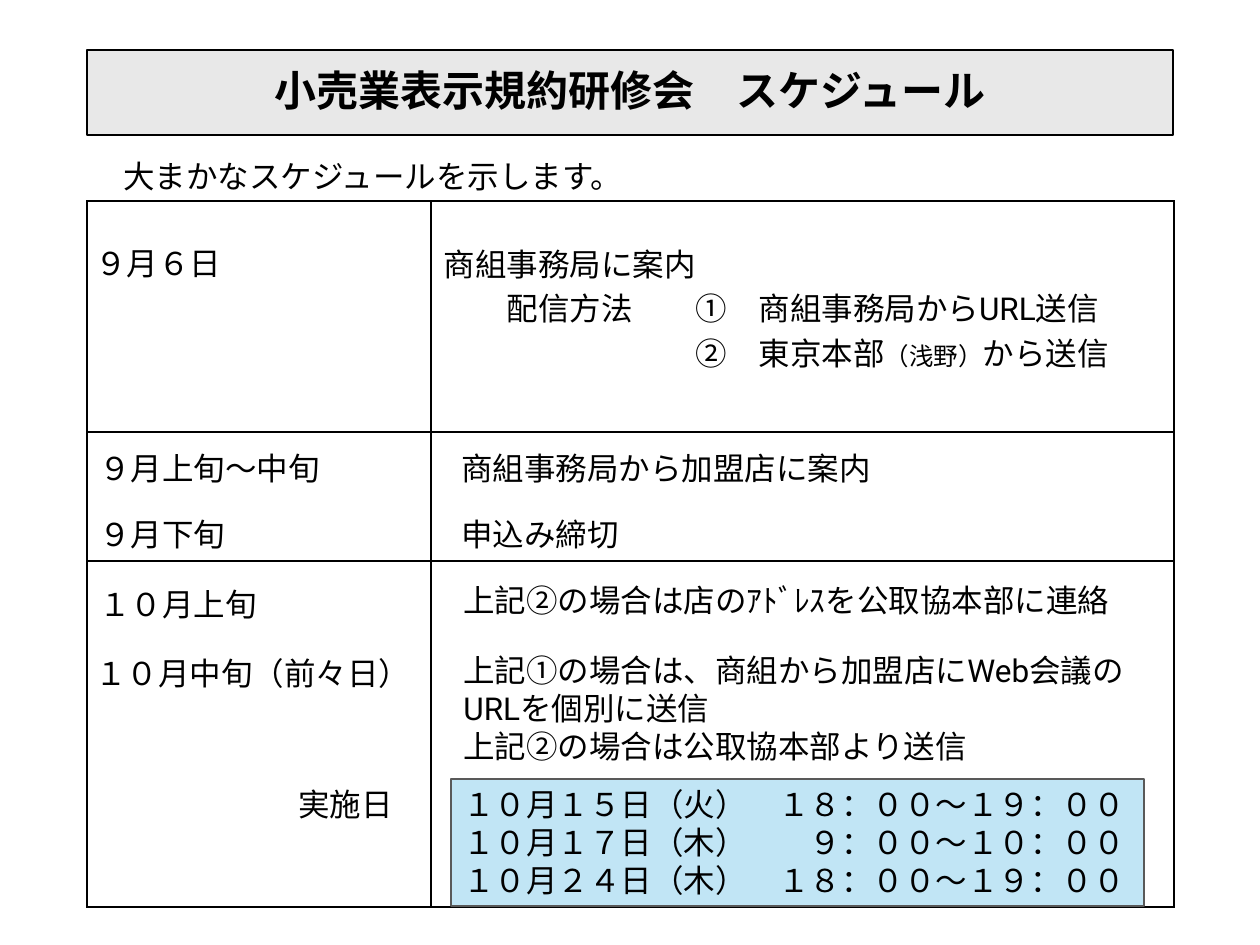
from pptx import Presentation
from pptx.dml.color import RGBColor
from pptx.enum.shapes import MSO_SHAPE
from pptx.enum.text import MSO_ANCHOR, PP_ALIGN
from pptx.oxml import parse_xml
from pptx.oxml.ns import nsdecls
from pptx.util import Pt

PX = 914400 // 126
FONT = "Roboto"
BLACK = RGBColor(0, 0, 0)
GRAY = RGBColor(0xE8, 0xE8, 0xE8)
BLUE = RGBColor(0xC1, 0xE5, 0xF5)
EDGE = RGBColor(0x59, 0x59, 0x59)


def write(frame, lines, size=18, bold=False, align=PP_ALIGN.LEFT, gap=1.0):
    frame.word_wrap = True
    for i, line in enumerate(lines):
        para = frame.add_paragraph() if i else frame.paragraphs[0]
        para.alignment = align
        para.line_spacing = gap
        for part in line if isinstance(line, list) else [(line, size)]:
            run = para.add_run()
            run.text = part[0]
            font = run.font
            font.name = FONT
            font.size = Pt(part[1])
            font.bold = bold
            font.color.rgb = BLACK
            east = parse_xml(f'<a:ea {nsdecls("a")} typeface="{FONT}"/>')
            font._element.find("{*}latin").addnext(east)


def panel(x, y, w, h, fill, edge):
    shape = slide.shapes.add_shape(
        MSO_SHAPE.RECTANGLE, x * PX, y * PX, w * PX, h * PX)
    shape.shadow.inherit = False
    shape.fill.solid()
    shape.fill.fore_color.rgb = fill
    shape.line.color.rgb = edge
    shape.line.width = Pt(0.75)
    shape.text_frame.vertical_anchor = MSO_ANCHOR.MIDDLE
    return shape.text_frame


deck = Presentation()
deck.slide_width = 1260 * PX
deck.slide_height = 945 * PX
slide = deck.slides.add_slide(deck.slide_layouts[6])

title = panel(87, 50, 1086, 85, GRAY, BLACK)
write(title, ["小売業表示規約研修会　スケジュール"],
      size=24, bold=True, align=PP_ALIGN.CENTER, gap=0.9)

cols = [344, 743]
rows = [231, 129, 346]
table = slide.shapes.add_table(
    3, 2, 87 * PX, 201 * PX, sum(cols) * PX, sum(rows) * PX).table
table.first_row = False
table.horz_banding = False
for col, width in zip(table.columns, cols):
    col.width = width * PX
for row, height in zip(table.rows, rows):
    row.height = height * PX
for cell in table.iter_cells():
    props = cell._tc.get_or_add_tcPr()
    for side in ("lnL", "lnR", "lnT", "lnB"):
        props.append(parse_xml(
            f'<a:{side} {nsdecls("a")} w="12700"><a:solidFill>'
            f'<a:srgbClr val="{BLACK}"/></a:solidFill></a:{side}>'))
    cell.fill.background()

notice = table.cell(0, 1)
notice.margin_top = 39 * PX
write(notice.text_frame, [
    "商組事務局に案内",
    "　　配信方法　　①　商組事務局からURL送信",
    [("　　　　　　　　②　東京本部", 18), ("（浅野）", 14), ("から送信", 18)],
], gap=1.2)

notes = [
    (111, 151, 602, 50, ["大まかなスケジュールを示します。"]),
    (83, 238, 250, 50, ["９月６日"]),
    (87, 443, 250, 50, ["９月上旬～中旬"]),
    (449, 443, 561, 50, ["商組事務局から加盟店に案内"]),
    (87, 509, 250, 50, ["９月下旬"]),
    (449, 509, 561, 50, ["申込み締切"]),
    (87, 579, 250, 50, ["１０月上旬"]),
    (451, 575, 716, 89, ["上記②の場合は店のｱﾄﾞﾚｽを公取協本部に連絡"]),
    (83, 648, 355, 50, ["１０月中旬（前々日）"]),
    (451, 645, 716, 127, ["上記①の場合は、商組から加盟店にWeb会議のURLを個別に送信",
                          "上記②の場合は公取協本部より送信"]),
    (286, 779, 152, 50, ["実施日"]),
]
for x, y, w, h, lines in notes:
    box = slide.shapes.add_textbox(x * PX, y * PX, w * PX, h * PX)
    write(box.text_frame, lines)

dates = panel(451, 779, 693, 127, BLUE, EDGE)
dates.vertical_anchor = MSO_ANCHOR.TOP
write(dates, [
    "１０月１５日（火）　１８：００～１９：００",
    "１０月１７日（木）　　９：００～１０：００",
    "１０月２４日（木）　１８：００～１９：００",
])

deck.save("out.pptx")
